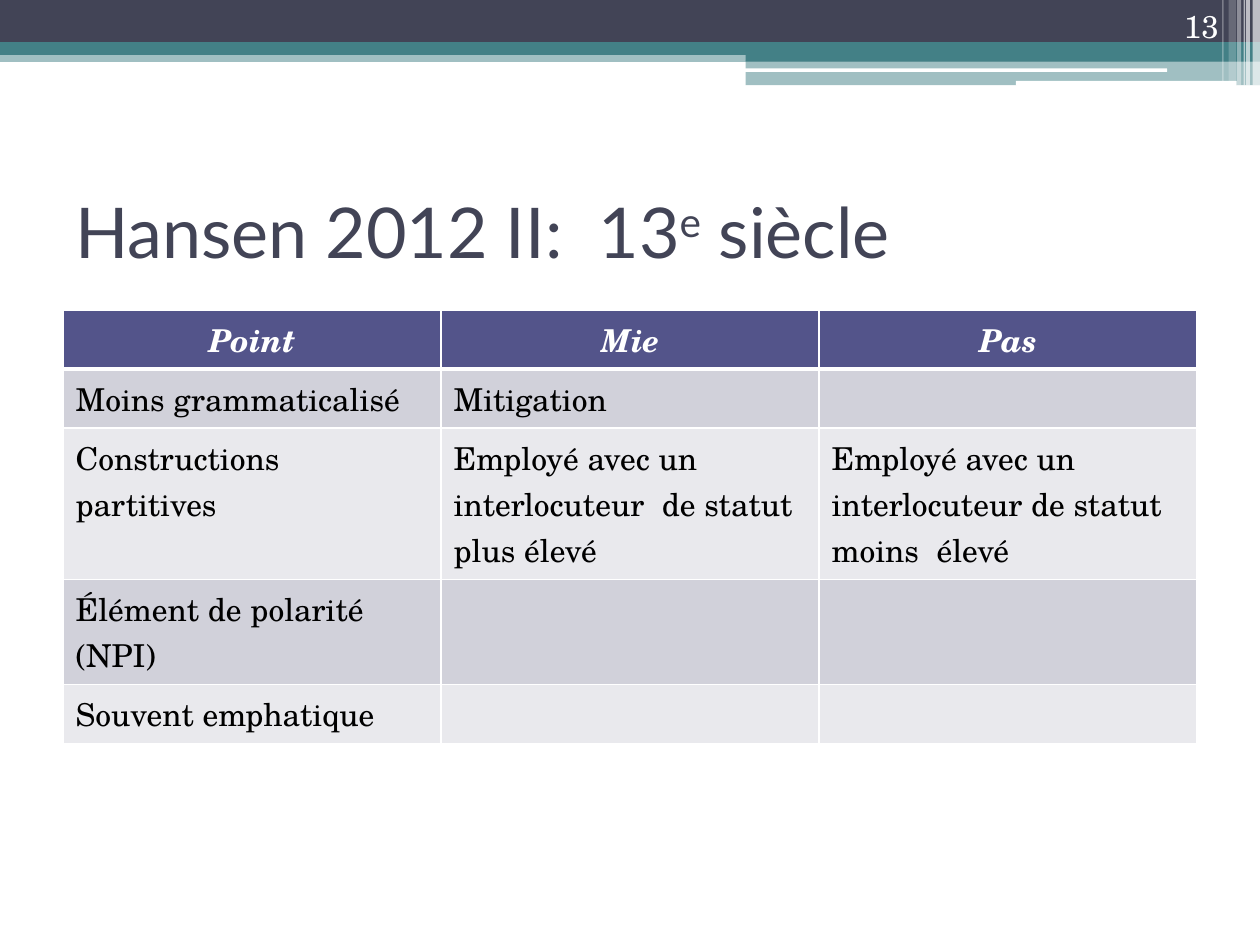
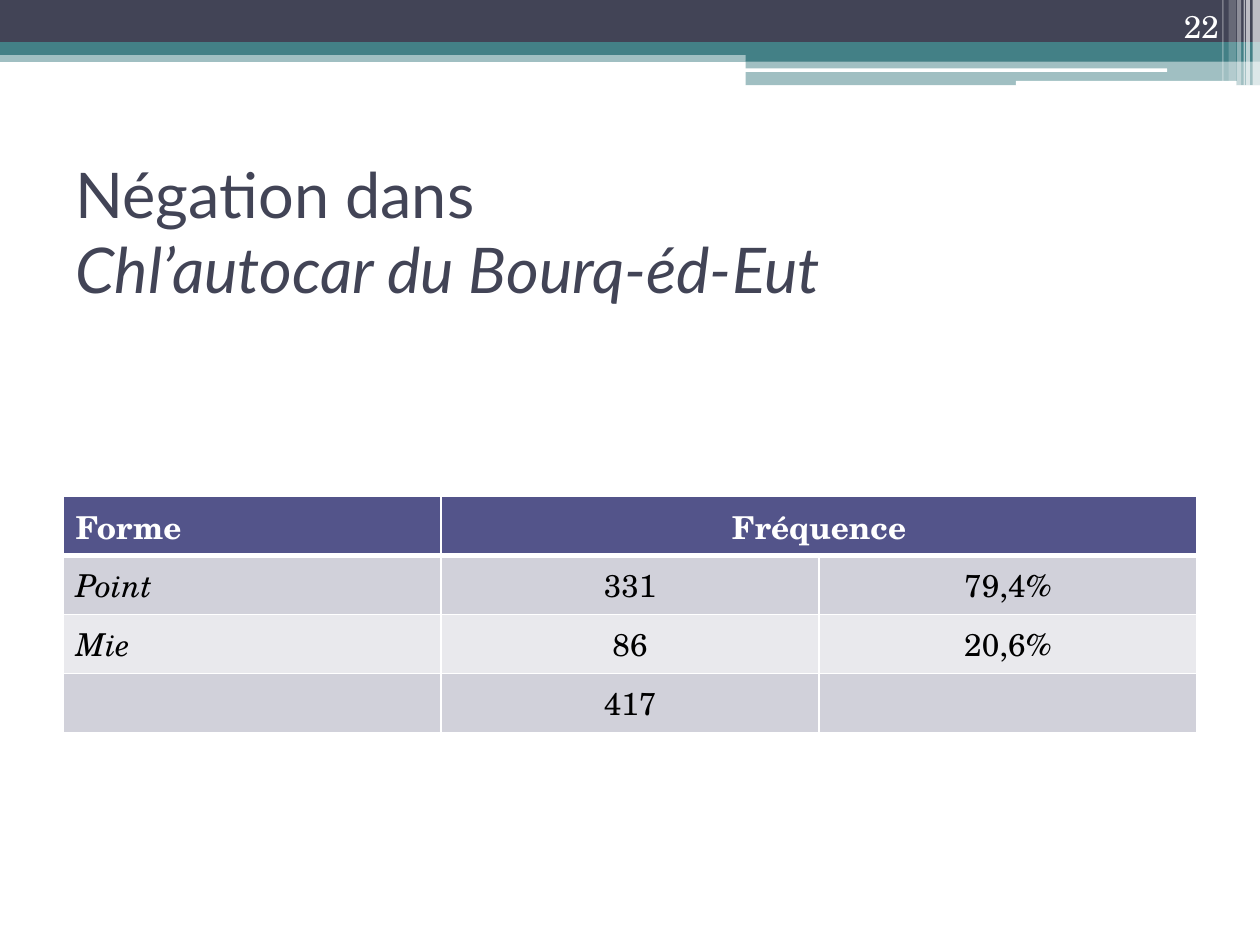
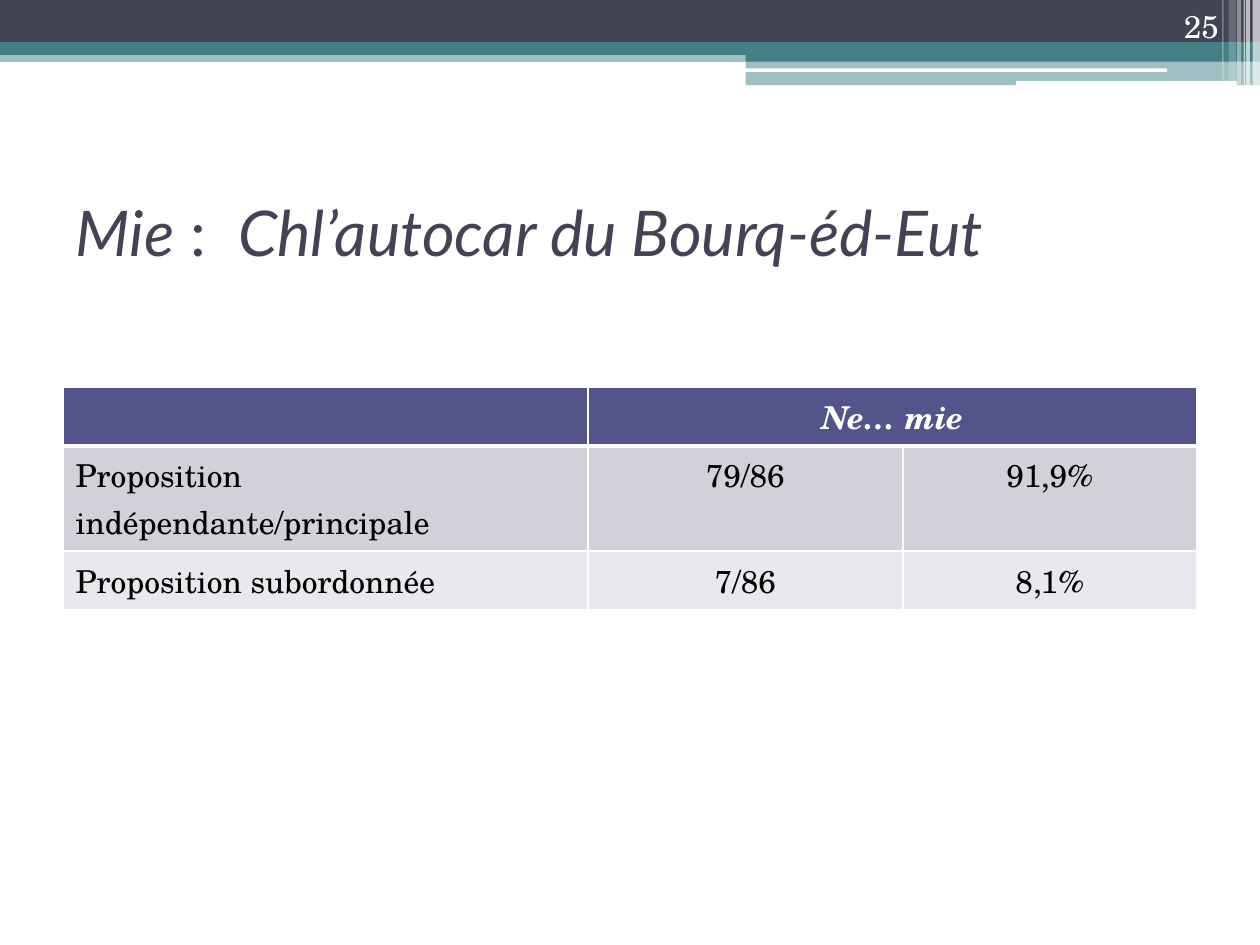
from copy import deepcopy

from lxml.etree import SubElement
from pptx import Presentation
from pptx.dml.color import RGBColor
from pptx.enum.shapes import MSO_SHAPE as Shape
from pptx.enum.text import MSO_ANCHOR as Anchor, MSO_AUTO_SIZE as AutoSize, PP_ALIGN as Align
from pptx.oxml.ns import qn
from pptx.util import Cm, Pt

WHITE = RGBColor(0xFF, 0xFF, 0xFF)
BLACK = RGBColor(0x00, 0x00, 0x00)
SLATE = RGBColor(0x42, 0x44, 0x56)
TEAL = RGBColor(0x43, 0x80, 0x86)
INDIGO = RGBColor(0x53, 0x54, 0x8A)
BAND_DARK = RGBColor(0xD1, 0xD1, 0xDA)
BAND_LIGHT = RGBColor(0xE9, 0xE9, 0xED)

TITLE_FONT = "Lato"
BODY_FONT = "TeX Gyre Schola"
PAGE_WIDTH, PAGE_HEIGHT = 25.4, 19.05
MARGIN = 1.27
ROW_PADDING, LINE_HEIGHT = 0.26, 0.93

# Header bands: preset, left, top, width, height, colour, opacity in percent
BANDS = [
    (Shape.RECTANGLE, 0, 1.02, PAGE_WIDTH, 0.23, TEAL, 50),
    (Shape.RECTANGLE, 0, 0, PAGE_WIDTH, 0.87, SLATE, 100),
    (Shape.RECTANGLE, 0, 0.85, PAGE_WIDTH, 0.26, TEAL, 100),
    (Shape.RECTANGLE, 15.03, 0.99, 10.37, 0.25, TEAL, 100),
    (Shape.RECTANGLE, 15.03, 1.22, 10.37, 0.5, TEAL, 50),
    (Shape.ROUNDED_RECTANGLE, 15.01, 1.38, 8.52, 0.07, WHITE, 100),
    (Shape.ROUNDED_RECTANGLE, 20.48, 1.63, 4.45, 0.1, WHITE, 100),
]
# White stripes at the right edge: left, width, height, opacity in percent
STRIPES = [
    (25.25, 0.15, 1.73, 65),
    (25.12, 0.08, 1.73, 65),
    (25.07, 0.03, 1.73, 60),
    (24.94, 0.08, 1.73, 40),
    (24.77, 0.15, 1.63, 20),
    (24.64, 0.03, 1.63, 30),
]


class Deck:
    """Holds the shared style and the current slide."""

    def __init__(self):
        self.deck = Presentation()
        self.deck.slide_width = Cm(PAGE_WIDTH)
        self.deck.slide_height = Cm(PAGE_HEIGHT)
        self.layout = self.deck.slide_layouts.get_by_name("Title Only")
        self.page = None

    def new_page(self, number):
        self.page = self.deck.slides.add_slide(self.layout)
        if len(self.deck.slides) == 1:
            self.add_header_to_layout()
        self.page_number(number)

    def add_header_to_layout(self):
        """Draw the header once and move it to the layout, behind its placeholders."""
        header = [self.band(*band) for band in BANDS]
        header += [self.band(Shape.RECTANGLE, left, 0, width, height, WHITE, opacity)
                   for left, width, height, opacity in STRIPES]
        tree = self.layout.element.cSld.spTree
        for index, shape in enumerate(header):
            shape.element.nvSpPr.cNvPr.set("id", str(100 + index))
            tree.insert(2 + index, shape.element)

    def band(self, preset, left, top, width, height, colour, opacity):
        shape = self.page.shapes.add_shape(preset, Cm(left), Cm(top), Cm(width), Cm(height))
        shape.shadow.inherit = False
        shape.line.fill.background()
        shape.fill.solid()
        shape.fill.fore_color.rgb = colour
        if opacity < 100:
            colour_node = shape.element.spPr.find(qn("a:solidFill"))[0]
            SubElement(colour_node, qn("a:alpha"), val=str(opacity * 1000))
        return shape

    def span(self, para, text, colour, **formats):
        span = para.add_run()
        span.text = text
        span.font.color.rgb = colour
        for name, value in formats.items():
            setattr(span.font, name, value)
        return span

    def page_number(self, number):
        box = self.page.shapes.add_textbox(Cm(22.71), Cm(0), Cm(2.11), Cm(1.02))
        frame = box.text_frame
        frame.word_wrap = True
        frame.vertical_anchor = Anchor.BOTTOM
        para = frame.paragraphs[0]
        para.alignment = Align.RIGHT
        self.span(para, str(number), WHITE, name=BODY_FONT, size=Pt(18))

    def title(self, size, *pieces):
        """Each piece is a text and its style: '', 'italic', 'super' or 'break' (after it)."""
        title = self.page.shapes.title
        place = {"left": MARGIN, "top": 3.17, "width": PAGE_WIDTH - 2 * MARGIN, "height": 2.97}
        for name, value in place.items():
            setattr(title, name, Cm(value))
        frame = title.text_frame
        frame.auto_size = AutoSize.NONE
        frame.vertical_anchor = Anchor.MIDDLE
        para = frame.paragraphs[0]
        para.alignment = Align.LEFT
        for text, style in pieces:
            span = self.span(para, text, SLATE, name=TITLE_FONT, size=Pt(size),
                             italic=style == "italic")
            properties = span._r.get_or_add_rPr()
            if style == "super":
                properties.set("baseline", "30000")
            if style == "break":
                para.add_line_break()
                para._p[-1].append(deepcopy(properties))

    def table(self, top, widths, line_counts, rows, centred, italic):
        """None joins a cell to the one on its left; centred and italic take (row, column)."""
        heights = [ROW_PADDING + LINE_HEIGHT * count for count in line_counts]
        frame = self.page.shapes.add_table(len(rows), len(widths), Cm(MARGIN), Cm(top),
                                           Cm(sum(widths)), Cm(sum(heights)))
        table = frame.table
        table.horz_banding = False
        for column, width in zip(table.columns, widths):
            column.width = Cm(width)
        for r, texts in enumerate(rows):
            table.rows[r].height = Cm(heights[r])
            for c, text in enumerate(texts):
                cell = table.cell(r, c)
                self.borders(cell, r)
                cell.fill.solid()
                cell.fill.fore_color.rgb = (INDIGO if r == 0 else
                                            BAND_DARK if r % 2 else BAND_LIGHT)
                if text is None:
                    table.cell(r, c - 1).merge(cell)
                elif text:
                    para = cell.text_frame.paragraphs[0]
                    para.alignment = Align.CENTER if centred(r, c) else Align.LEFT
                    self.span(para, text, BLACK if r else WHITE, name=BODY_FONT,
                              size=Pt(18), bold=r == 0, italic=italic(r, c))

    def borders(self, cell, row):
        """White lines, thicker between the heading row and the first body row."""
        weights = {"L": 1, "R": 1, "T": 3 if row == 1 else 1, "B": 3 if row == 0 else 1}
        properties = cell._tc.get_or_add_tcPr()
        for side, weight in weights.items():
            line = SubElement(properties, qn(f"a:ln{side}"), w=str(Pt(weight)))
            fill = SubElement(line, qn("a:solidFill"))
            SubElement(fill, qn("a:srgbClr"), val=str(WHITE))


def heading_row(row, column):
    return row == 0


def value_columns(row, column):
    return column > 0


def row_labels(row, column):
    return row > 0 and column == 0


def main():
    deck = Deck()
    book = "Chl’autocar du Bourq-éd-Eut"

    # Thirteenth-century uses
    deck.new_page(13)
    deck.title(40, ("Hansen 2012 II:  13", ""), ("e", "super"), (" siècle", ""))
    deck.table(6.25, [7.62] * 3, [1, 1, 3, 2, 1], [
        ["Point", "Mie", "Pas"],
        ["Moins grammaticalisé", "Mitigation", ""],
        ["Constructions partitives",
         "Employé avec un interlocuteur  de statut plus élevé",
         "Employé avec un interlocuteur de statut moins  élevé"],
        ["Élément de polarité (NPI)", "", ""],
        ["Souvent emphatique", "", ""],
    ], centred=heading_row, italic=heading_row)

    # Frequency of the two forms
    deck.new_page(22)
    deck.title(36, ("Négation dans ", "break"), (book, "italic"))
    deck.table(10.01, [7.62] * 3, [1] * 4, [
        ["Forme", "Fréquence", None],
        ["Point", "331", "79,4%"],
        ["Mie", "86", "20,6%"],
        ["", "417", ""],
    ], centred=value_columns, italic=row_labels)

    # Clause types with mie
    deck.new_page(25)
    deck.title(36, ("Mie", "italic"), (" :  ", ""), (book, "italic"))
    deck.table(7.8, [10.58, 6.35, 5.93], [1, 2, 1], [
        ["", "Ne… mie", None],
        ["Proposition indépendante/principale", "79/86", "91,9%"],
        ["Proposition subordonnée", "7/86", "8,1%"],
    ], centred=value_columns, italic=heading_row)

    deck.deck.save("out.pptx")


if __name__ == "__main__":
    main()
